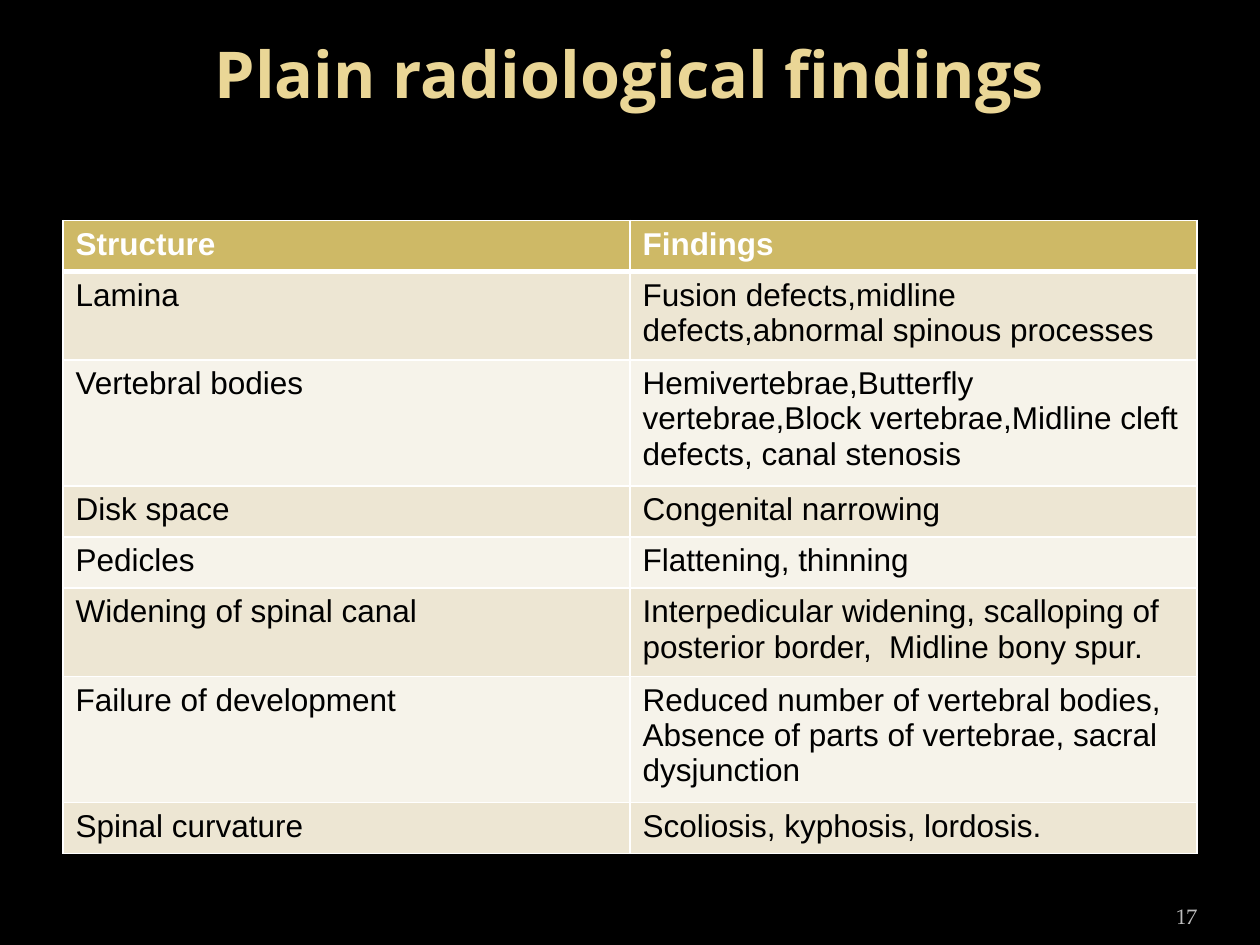
from lxml import etree
from pptx import Presentation
from pptx.dml.color import RGBColor
from pptx.enum import text as tx
from pptx.oxml import ns
from pptx.util import Pt

BLACK = RGBColor(0, 0, 0)
WHITE = RGBColor(255, 255, 255)
GOLD = RGBColor(0xCE, 0xB9, 0x66)
PALE = RGBColor(0xEA, 0xD6, 0x96)
SAND = RGBColor(0xED, 0xE6, 0xD3)
CREAM = RGBColor(0xF6, 0xF3, 0xEA)
GREY = RGBColor(0xBD, 0xBD, 0xBD)

ROWS = [
    ("Structure", "Findings"),
    ("Lamina", "Fusion defects,midline defects,abnormal spinous processes"),
    ("Vertebral bodies", "Hemivertebrae,Butterfly vertebrae,Block vertebrae,"
     "Midline cleft defects, canal stenosis"),
    ("Disk space", "Congenital narrowing"),
    ("Pedicles", "Flattening, thinning"),
    ("Widening of spinal canal", "Interpedicular widening, scalloping of "
     "posterior border,  Midline bony spur."),
    ("Failure of development", "Reduced number of vertebral bodies, "
     "Absence of parts of vertebrae, sacral dysjunction"),
    ("Spinal curvature", "Scoliosis, kyphosis, lordosis."),
]


def write(frame, words, size=18, font="Arial", color=BLACK, bold=False,
          align=tx.PP_ALIGN.LEFT):
    para = frame.paragraphs[0]
    para.alignment = align
    run = para.add_run()
    run.text = words
    run.font.size = Pt(size)
    run.font.name = font
    run.font.bold = bold
    run.font.color.rgb = color


def label(slide, box, words, anchor, pads, **style):
    frame = slide.shapes.add_textbox(*map(Pt, box)).text_frame
    frame.word_wrap = True
    frame.vertical_anchor = anchor
    (frame.margin_left, frame.margin_top,
     frame.margin_right, frame.margin_bottom) = map(Pt, pads)
    write(frame, words, **style)


def title(slide, box):
    label(slide, box, "Plain radiological findings", tx.MSO_ANCHOR.MIDDLE,
          (7.2, 0, 7.2, 50), size=36.9, font="Open Sans", color=PALE,
          bold=True, align=tx.PP_ALIGN.CENTER)


def number(slide, box):
    label(slide, box, "17", tx.MSO_ANCHOR.BOTTOM, (0, 3.6, 0, 3.6), size=12,
          font="TeX Gyre Pagella", color=GREY, align=tx.PP_ALIGN.RIGHT)


def border(cell, widths):
    props = cell._tc.get_or_add_tcPr()
    for spot, (side, width) in enumerate(widths.items()):
        line = etree.Element(ns.qn("a:ln" + side), w=str(Pt(width)))
        fill = etree.SubElement(line, ns.qn("a:solidFill"))
        etree.SubElement(fill, ns.qn("a:srgbClr"), val=str(WHITE))
        props.insert(spot, line)


def table(slide, box):
    grid = slide.shapes.add_table(len(ROWS), 2, *map(Pt, box)).table
    for i, row in enumerate(ROWS):
        head = i == 0
        for j, words in enumerate(row):
            cell = grid.cell(i, j)
            cell.fill.solid()
            cell.fill.fore_color.rgb = GOLD if head else SAND if i % 2 else CREAM
            write(cell.text_frame, words, bold=head,
                  color=WHITE if head else BLACK)
            border(cell, {"L": 1, "R": 1, "T": 3 if i == 1 else 1,
                          "B": 3 if head else 1})


def main():
    deck = Presentation()
    deck.slide_width, deck.slide_height = Pt(720), Pt(540)
    slide = deck.slides.add_slide(deck.slide_layouts[6])
    slide.background.fill.solid()
    slide.background.fill.fore_color.rgb = BLACK
    title(slide, (36, 21.6, 648, 90))
    table(slide, (36, 126, 648, 29.2 * len(ROWS)))
    number(slide, (624, 505.5, 60, 28.8))
    deck.save("out.pptx")


if __name__ == "__main__":
    main()
